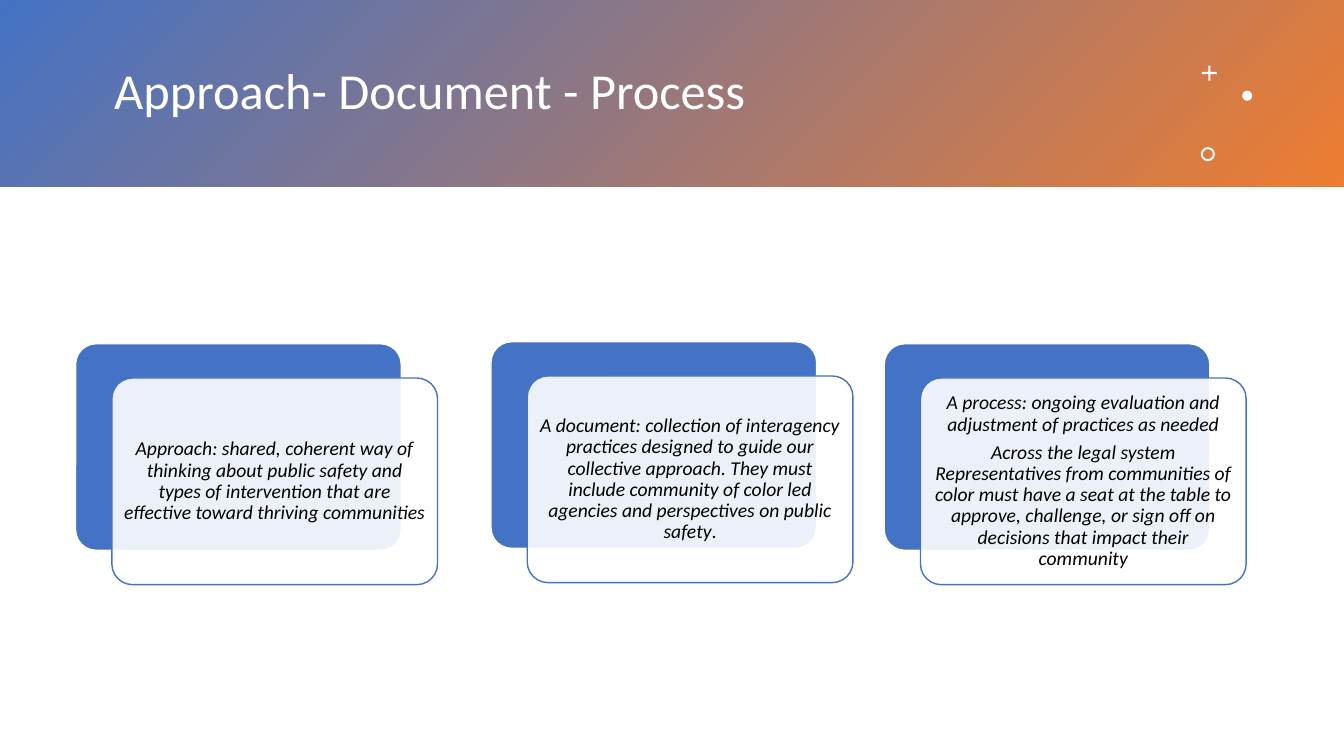
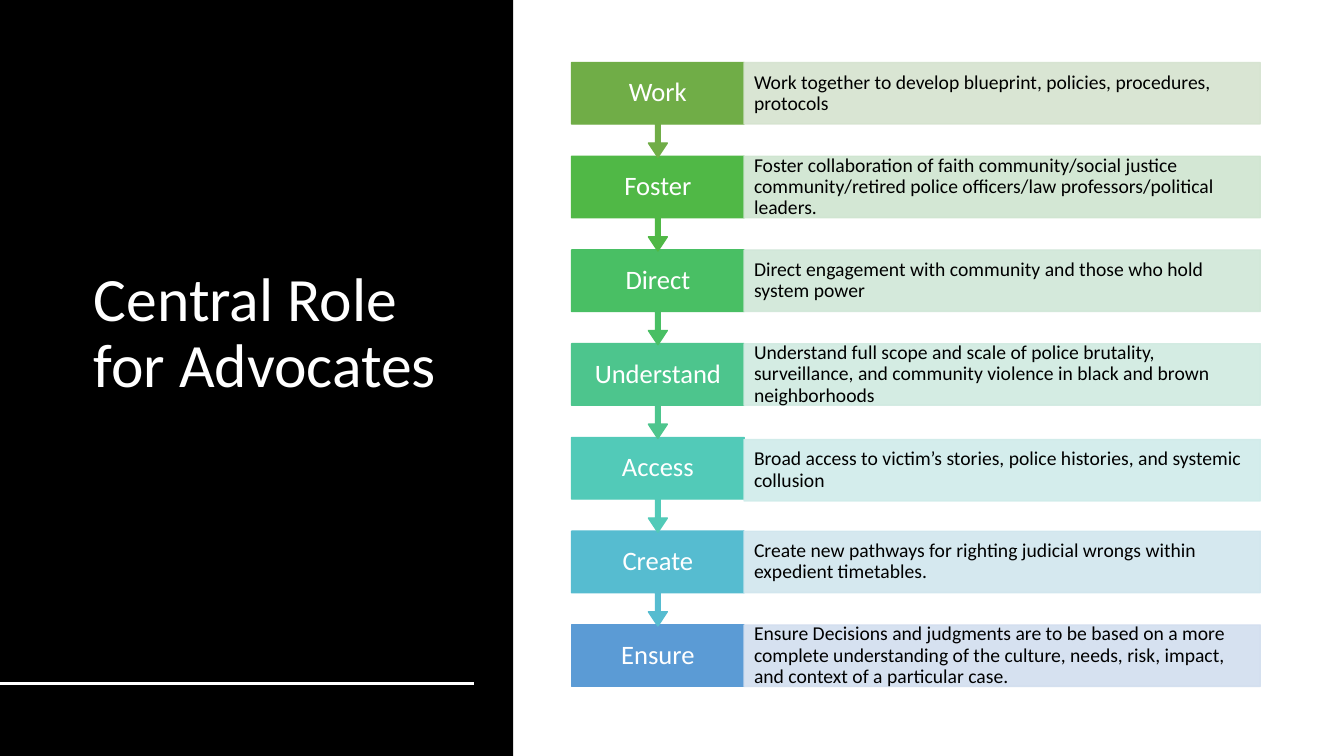
"""Build two slides: three layered cards, and a chain of labelled steps."""
from dataclasses import dataclass
from typing import NamedTuple, Optional

from pptx import Presentation, util as u
from pptx.dml.color import RGBColor
from pptx.enum import shapes, text
from pptx.oxml import xmlchemy

KIND = shapes.MSO_SHAPE
ALIGN = text.PP_ALIGN


@dataclass(frozen=True)
class Theme:
    font: str = "Calibri"
    white: str = "FFFFFF"
    black: str = "000000"
    blue: str = "4472C4"
    orange: str = "ED7D31"
    wide: float = 36
    tall: float = 44
    label: float = 19
    body: float = 14
    leading: float = 0.9
    after: float = 5
    alpha: int = 90


class Box(NamedTuple):
    left: float
    top: float
    width: float
    height: float

    def place(self) -> list[u.Length]:
        return [u.Inches(side) for side in self]

    def shift(self, right: float, down: float) -> "Box":
        return self._replace(left=self.left + right, top=self.top + down)


class Run(NamedTuple):
    words: str
    slant: bool = False


class Style(NamedTuple):
    size: float
    color: str
    align: ALIGN
    side: float
    edge: float


class Card(NamedTuple):
    left: float
    top: float
    lines: list[list[Run]]


class Step(NamedTuple):
    label: str
    words: str
    dark: str
    pale: str
    drop: float = 0


class Mark(NamedTuple):
    kind: KIND
    box: Box
    bend: Optional[float] = None


THEME = Theme()
TITLE_ONLY = 5

CARD_TEXT = Style(THEME.body, THEME.black, ALIGN.CENTER, 0.06, 0.06)
LABEL_TEXT = Style(THEME.label, THEME.white, ALIGN.CENTER, 0.12, 0.15)
STEP_TEXT = Style(THEME.body, THEME.black, ALIGN.LEFT, 0.1, 0)

CARD_SIZE = (3.23, 2.05)
CARD_SHIFT = (0.36, 0.34)
CARD_BEND = 0.1
STEP_TOP, STEP_PITCH = 0.62, 0.93
STEP_HEIGHT, ARROW_HEIGHT = 0.61, 0.94
LABEL_LEFT, LABEL_WIDTH, WORDS_WIDTH = 5.67, 1.71, 5.12
ARROW_BENDS = (0.05, 0.1, 0.15, 0.65)

MARKS = [
    Mark(KIND.CROSS, Box(11.92, 0.65, 0.15, 0.15), 0.43),
    Mark(KIND.OVAL, Box(12.32, 0.9, 0.1, 0.1)),
    Mark(KIND.DONUT, Box(11.91, 1.46, 0.14, 0.14), 0.14),
]

CARDS = [
    Card(0.75, 3.41, [[Run(
        "Approach: shared, coherent way of thinking about public safety and types of "
        "intervention that are effective toward thriving communities", True)]]),
    Card(4.87, 3.39, [[Run(
        "A document: collection of interagency practices designed to guide our "
        "collective approach. They must include community of color led agencies and "
        "perspectives on public safety", True), Run(".")]]),
    Card(8.77, 3.41, [
        [Run("A process: ongoing evaluation and adjustment of practices as needed", True)],
        [Run("Across the legal system Representatives from communities of color must "
             "have a seat at the table to approve, challenge, or sign off on decisions "
             "that impact their community", True)]]),
]

STEPS = [
    Step("Work", "Work together to develop blueprint, policies, procedures, protocols",
         "70AD47", "D5E3CF"),
    Step("Foster", "Foster collaboration of faith community/social justice "
         "community/retired police officers/law professors/political leaders.",
         "50B846", "CFE5D0"),
    Step("Direct", "Direct engagement with community and those who hold system power",
         "49BF64", "D0E7D8"),
    Step("Understand", "Understand full scope and scale of police brutality, "
         "surveillance, and community violence in black and brown neighborhoods",
         "4DC58D", "D0EAE1"),
    Step("Access", "Broad access to victim’s stories, police histories, and systemic "
         "collusion", "52CAB8", "D0ECEA", 0.02),
    Step("Create", "Create new pathways for righting judicial wrongs within expedient "
         "timetables.", "56BCD0", "D1E6EE"),
    Step("Ensure", "Ensure Decisions and judgments are to be based on a more complete "
         "understanding of the culture, needs, risk, impact, and context of a "
         "particular case.", "5B9BD5", "D2DEEF"),
]


def rgb(code: str) -> RGBColor:
    return RGBColor.from_string(code)


def draw(slide, kind: KIND, box: Box, fill: str, line: Optional[str] = None,
         bends: tuple[float, ...] = ()):
    shape = slide.shapes.add_shape(kind, *box.place())
    shape.shadow.inherit = False
    shape.fill.solid()
    shape.fill.fore_color.rgb = rgb(fill)
    if line:
        shape.line.color.rgb = rgb(line)
        shape.line.width = u.Pt(1)
    else:
        shape.line.fill.background()
    for i, bend in enumerate(bends):
        shape.adjustments[i] = bend
    return shape


def fade(shape, query: str) -> None:
    for color in shape.element.spPr.xpath(query):
        alpha = color.makeelement(xmlchemy.qn("a:alpha"), {"val": str(THEME.alpha * 1000)})
        color.append(alpha)


def write(shape, lines: list[list[Run]], style: Style) -> None:
    frame = shape.text_frame
    frame.word_wrap = True
    frame.auto_size = text.MSO_AUTO_SIZE.NONE
    frame.vertical_anchor = text.MSO_ANCHOR.MIDDLE
    frame.margin_left = frame.margin_right = u.Inches(style.side)
    frame.margin_top = frame.margin_bottom = u.Inches(style.edge)
    for i, line in enumerate(lines):
        para = frame.add_paragraph() if i else frame.paragraphs[0]
        para.alignment = style.align
        para.line_spacing = THEME.leading
        para.space_before = u.Pt(0)
        para.space_after = u.Pt(THEME.after if i < len(lines) - 1 else 0)
        for part in line:
            run = para.add_run()
            run.text = part.words
            run.font.name = THEME.font
            run.font.size = u.Pt(style.size)
            run.font.italic = part.slant
            run.font.color.rgb = rgb(style.color)


def start(deck, words: str, size: float, panel: Box, place: Box):
    slide = deck.slides.add_slide(deck.slide_layouts[TITLE_ONLY])
    title = slide.shapes.title
    title.left, title.top, title.width, title.height = place.place()
    write(title, [[Run(words)]], Style(size, THEME.white, ALIGN.LEFT, 0.1, 0.05))
    band = draw(slide, KIND.RECTANGLE, panel, THEME.black)
    band.element.addnext(title.element)
    return slide, band


def add_card(slide, card: Card) -> None:
    back = Box(card.left, card.top, *CARD_SIZE)
    draw(slide, KIND.ROUNDED_RECTANGLE, back, THEME.blue, THEME.white, (CARD_BEND,))
    front = draw(slide, KIND.ROUNDED_RECTANGLE, back.shift(*CARD_SHIFT),
                 THEME.white, THEME.blue, (CARD_BEND,))
    fade(front, "a:solidFill/a:srgbClr")
    write(front, card.lines, CARD_TEXT)


def add_step(slide, row: int, step: Step) -> None:
    top = STEP_TOP + row * STEP_PITCH
    last = row == len(STEPS) - 1
    label = draw(
        slide, KIND.RECTANGLE if last else KIND.DOWN_ARROW_CALLOUT,
        Box(LABEL_LEFT, top, LABEL_WIDTH, STEP_HEIGHT if last else ARROW_HEIGHT),
        step.dark, step.dark, () if last else ARROW_BENDS)
    write(label, [[Run(step.label)]], LABEL_TEXT)
    words = draw(
        slide, KIND.RECTANGLE,
        Box(LABEL_LEFT + LABEL_WIDTH, top + step.drop, WORDS_WIDTH, STEP_HEIGHT),
        step.pale, step.pale)
    fade(words, ".//a:srgbClr")
    write(words, [[Run(step.words)]], STEP_TEXT)


def add_rule(slide, width: float, top: float) -> None:
    rule = slide.shapes.add_connector(
        shapes.MSO_CONNECTOR.STRAIGHT,
        u.Inches(0), u.Inches(top), u.Inches(width), u.Inches(top))
    rule.line.color.rgb = rgb(THEME.white)
    rule.line.width = u.Pt(2)
    frame = rule.element.spPr
    frame.append(frame.makeelement(xmlchemy.qn("a:effectLst"), {}))


def build_cards(deck) -> None:
    slide, band = start(deck, " Approach- Document - Process", THEME.wide,
                        Box(0, 0, 13.33, 1.85), Box(0.92, 0.33, 10.75, 1.19))
    band.fill.gradient()
    band.fill.gradient_angle = 315
    for i, color in enumerate((THEME.blue, THEME.orange)):
        stop = band.fill.gradient_stops[i]
        stop.color.rgb = rgb(color)
        stop.position = i
    for mark in MARKS:
        bends = () if mark.bend is None else (mark.bend,)
        draw(slide, mark.kind, mark.box, THEME.white, bends=bends)
    for card in CARDS:
        add_card(slide, card)


def build_steps(deck) -> None:
    slide, _ = start(deck, "Central Role for Advocates", THEME.tall,
                     Box(0, 0, 5.09, 7.5), Box(0.83, 0.61, 3.9, 5.42))
    add_rule(slide, 4.7, 6.78)
    for row, step in reversed(list(enumerate(STEPS))):
        add_step(slide, row, step)


def main() -> None:
    deck = Presentation()
    deck.slide_width, deck.slide_height = u.Inches(13.33), u.Inches(7.5)
    build_cards(deck)
    build_steps(deck)
    deck.save("out.pptx")


if __name__ == "__main__":
    main()
